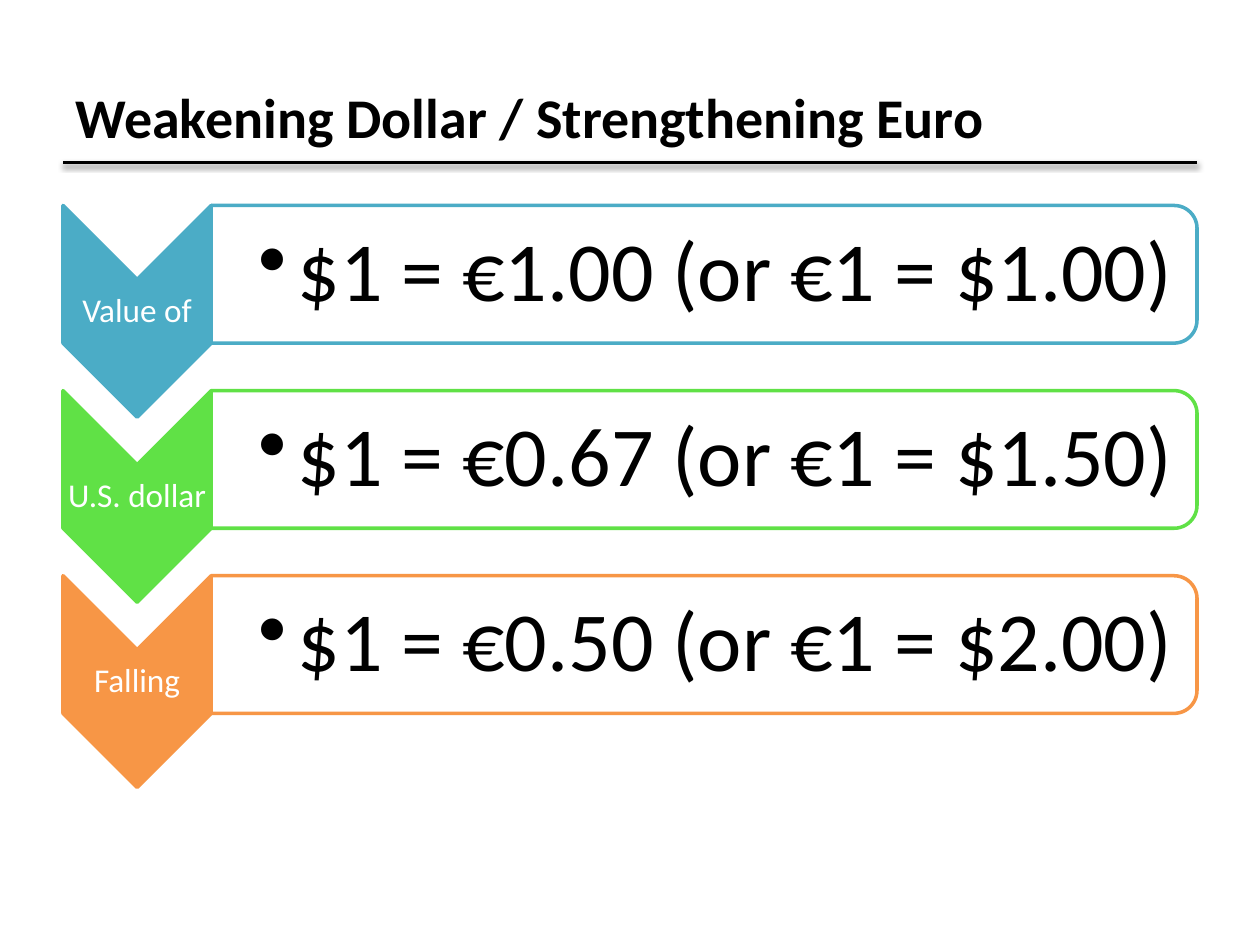
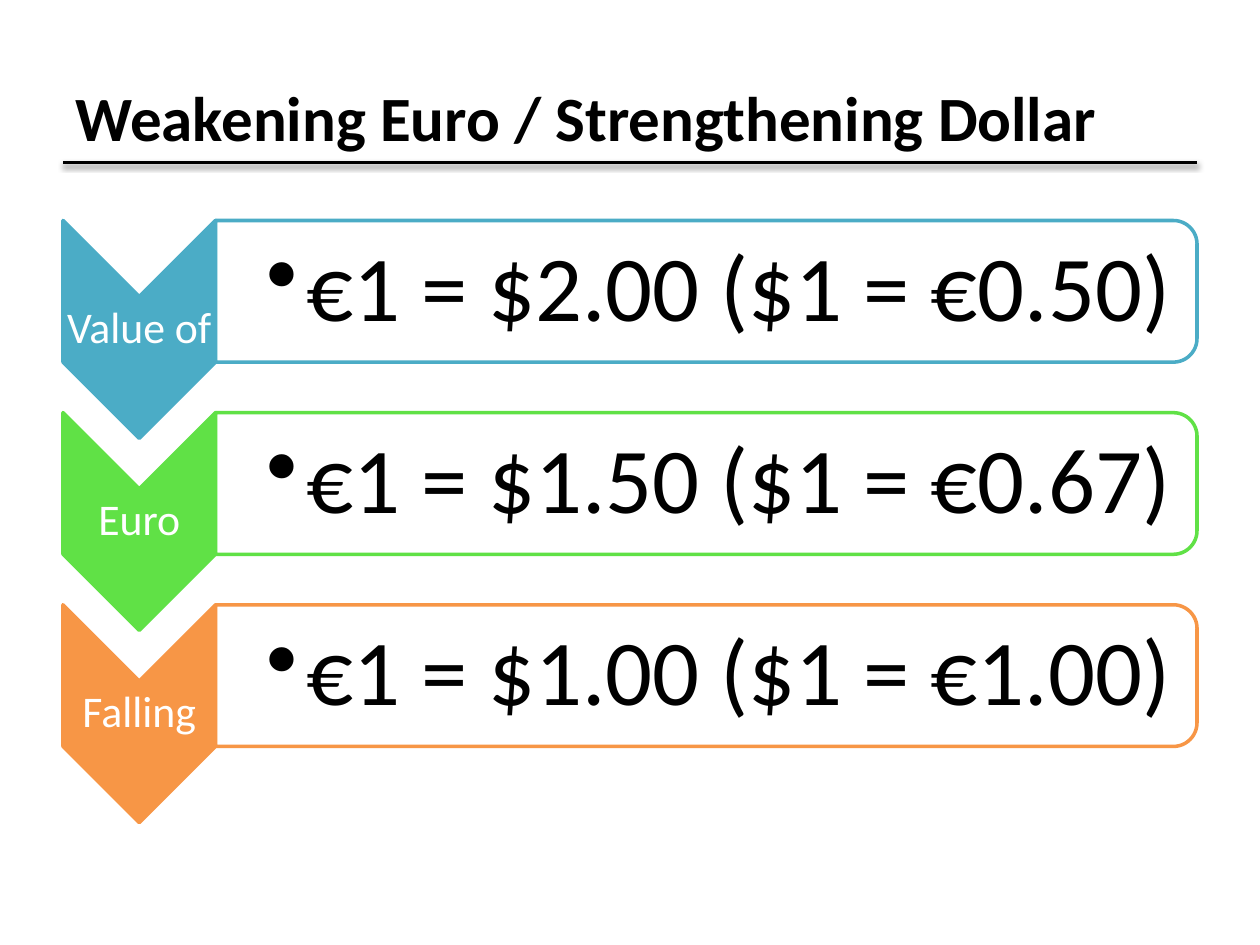
from lxml import etree
from pptx import Presentation
from pptx.dml.color import RGBColor
from pptx.enum import shapes, text
from pptx.oxml import ns
from pptx.util import Pt

FONT = "Calibri"
BLACK, WHITE = "000000", "FFFFFF"
HUES = ["4BACC6", "60E146", "F79646"]
LEFT, RIGHT = 36, 684
KIND = shapes.MSO_SHAPE


def paint(color, code):
    color.rgb = RGBColor.from_string(code)


def write(slide, area, words, size, code, inset, bold=False):
    box = slide.shapes.add_textbox(*[Pt(n) for n in area])
    frame = box.text_frame
    frame.word_wrap = True
    frame.vertical_anchor = text.MSO_ANCHOR.MIDDLE
    frame.margin_left, frame.margin_top, frame.margin_right, frame.margin_bottom = [Pt(n) for n in inset]
    para = frame.paragraphs[0]
    run = para.add_run()
    run.text = words
    run.font.name = FONT
    run.font.size = Pt(size)
    run.font.bold = bold
    paint(run.font.color, code)
    return para


decks = [
    dict(title="Weakening Dollar / Strengthening Euro", head=32,
         top=117.4, tall=121, step=105.8, small=19, big=48, pad=1, gap=2.4, lead=26.9,
         rows=[("Value of", "$1 = €1.00 (or €1 = $1.00)"),
               ("U.S. dollar", "$1 = €0.67 (or €1 = $1.50)"),
               ("Falling", "$1 = €0.50 (or €1 = $2.00)")]),
    dict(title="Weakening Euro / Strengthening Dollar", head=36,
         top=126, tall=124.5, step=109.8, small=25, big=53, pad=1.2, gap=2.6, lead=29.4,
         rows=[("Value of", "€1 = $2.00 ($1 = €0.50)"),
               ("Euro", "€1 = $1.50 ($1 = €0.67)"),
               ("Falling", "€1 = $1.00 ($1 = €1.00)")]),
]

prs = Presentation()
prs.slide_width, prs.slide_height = Pt(720), Pt(540)

for deck in decks:
    slide = prs.slides.add_slide(prs.slide_layouts[6])

    rule = slide.shapes.add_connector(shapes.MSO_CONNECTOR.STRAIGHT, Pt(LEFT), Pt(93), Pt(RIGHT), Pt(93))
    rule.line.width = Pt(2)
    paint(rule.line.color, BLACK)
    glow = etree.SubElement(rule._element.spPr, ns.qn("a:effectLst"))
    cast = etree.SubElement(glow, ns.qn("a:outerShdw"), blurRad=str(Pt(3.1)), dist=str(Pt(1.6)),
                            dir="5400000", rotWithShape="0")
    tone = etree.SubElement(cast, ns.qn("a:srgbClr"), val=BLACK)
    etree.SubElement(tone, ns.qn("a:alpha"), val="38000")

    write(slide, (LEFT, 21.6, 648, 90), deck["title"], deck["head"], BLACK, (7.2, 3.6, 7.2, 3.6), True)

    tall, pad, gap = deck["tall"], deck["pad"], deck["gap"]
    wide, bar = tall * 0.7, tall * 0.65
    edge = LEFT + wide
    span = RIGHT - edge
    for i, (label, rate) in enumerate(deck["rows"]):
        top = deck["top"] + i * deck["step"]
        parts = [(KIND.CHEVRON, LEFT, wide, tall, HUES[i]),
                 (KIND.ROUND_2_SAME_RECTANGLE, edge, span, bar, WHITE)]
        for kind, x, w, h, fill in parts:
            shape = slide.shapes.add_shape(kind, Pt(x + (w - h) / 2), Pt(top + (h - w) / 2), Pt(h), Pt(w))
            shape.rotation = 90
            shape.shadow.inherit = False
            shape.fill.solid()
            paint(shape.fill.fore_color, fill)
            shape.line.width = Pt(2)
            paint(shape.line.color, HUES[i])
            if fill == WHITE:
                tone = shape._element.spPr.find(ns.qn("a:solidFill"))[0]
                etree.SubElement(tone, ns.qn("a:alpha"), val="90000")

        para = write(slide, (LEFT, top + tall * 0.35, wide, tall * 0.3), label, deck["small"], WHITE, [pad] * 4)
        para.alignment = text.PP_ALIGN.CENTER
        para.line_spacing = 0.9

        para = write(slide, (edge, top, span - 3.8, bar), rate, deck["big"], BLACK, (deck["lead"], gap, gap, gap))
        para.line_spacing = 0.9
        props = para._p.get_or_add_pPr()
        props.set("marL", str(Pt(22.5)))
        props.set("indent", str(Pt(-22.5)))
        etree.SubElement(props, ns.qn("a:buChar"), char="•")

prs.save("out.pptx")
